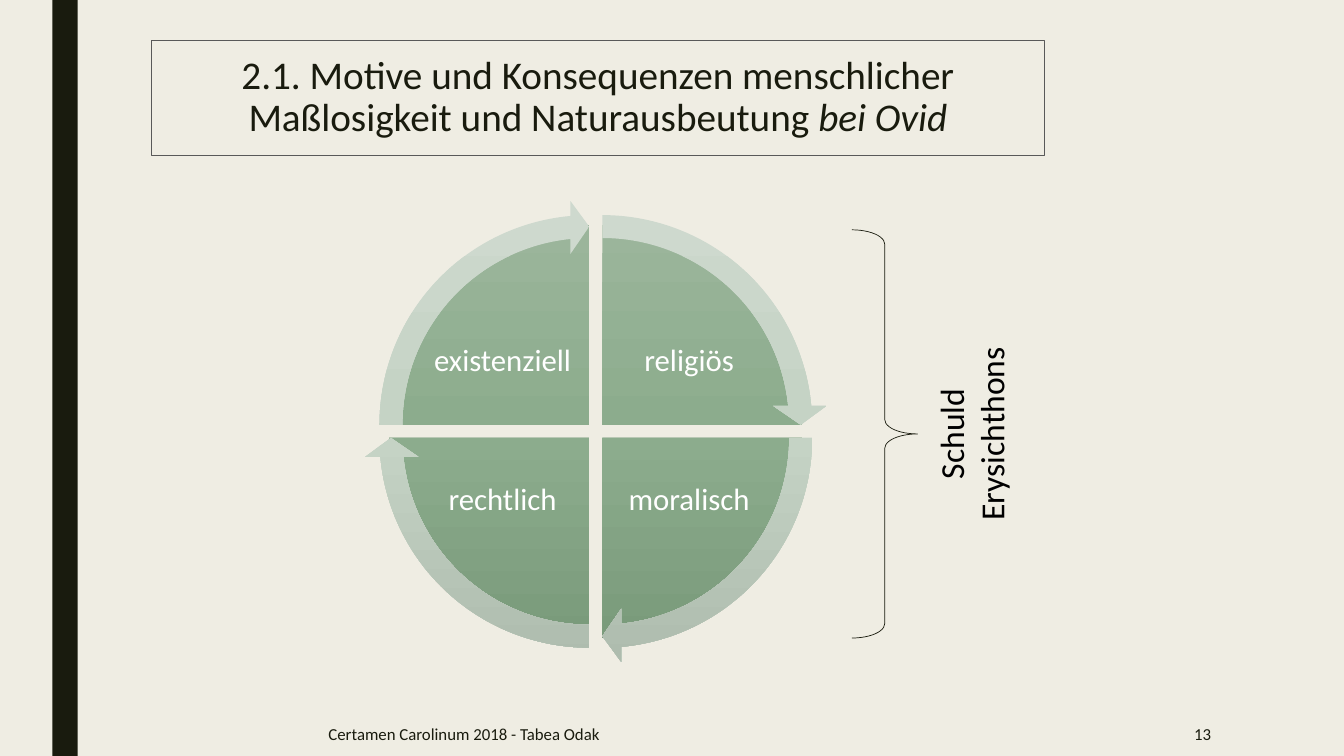
from dataclasses import dataclass

from lxml import etree
from pptx import Presentation
from pptx.dml.color import RGBColor
from pptx.enum.shapes import MSO_SHAPE as Shape
from pptx.enum.text import MSO_ANCHOR as Anchor, PP_ALIGN as Align
from pptx.oxml.ns import qn
from pptx.util import Inches, Pt

TITLE = [("2.1. Motive und Konsequenzen menschlicher "
          "Maßlosigkeit und Naturausbeutung ", False), ("bei Ovid", True)]
# Label, column side, row side, start of the quarter in quarter turns
QUARTERS = [
    ("religiös", 1, -1, 3),
    ("moralisch", 1, 1, 0),
    ("rechtlich", -1, 1, 1),
    ("existenziell", -1, -1, 2),
]
GUILT = ["Schuld", "Erysichthons"]
FOOTER, NUMBER = "Certamen Carolinum 2018 - Tabea Odak", "13"


@dataclass(frozen=True)
class Theme:
    font: str = "Calibri"
    paper: str = "EFEDE3"
    ink: str = "191B0E"
    black: str = "000000"
    white: str = "FFFFFF"
    frame: str = "595959"
    pie: tuple = ("9BB59B", "8CAC8D", "7A9B7B")
    arrow: tuple = ("CED9CE", "C5D3C5", "AEBCAE")
    title: int = 28
    guilt: int = 24
    label: int = 22
    footer: int = 12


THEME = Theme()
WIDTH, HEIGHT = 13.33, 7.5
CENTRE_X, CENTRE_Y, HALF_GAP = 5.91, 4.28, 0.065
PIE_SIZE, ARROW_SIZE = 3.97, 4.46
LABEL_W, LABEL_H, LABEL_DX, LABEL_DY = 1.47, 1.09, 0.925, 0.69
QUARTER_TURN, ARROW_SWEEP = 54, 50.725  # adjustment units, 216 to a full turn
FOOTER_TOP, FOOTER_H = 7.06, 0.44

deck = Presentation()
deck.slide_width, deck.slide_height = Inches(WIDTH), Inches(HEIGHT)
page = deck.slides.add_slide(deck.slide_layouts[6])
page.background.fill.solid()
page.background.fill.fore_color.rgb = RGBColor.from_string(THEME.paper)


def around(x, y, width, height):
    """Left, top, width and height of a box centred on x, y."""
    return x - width / 2, y - height / 2, width, height


def add_shape(kind, place, fill=None, line=None, adjust=()):
    """Add a preset shape; line is a (colour, points) pair."""
    shape = page.shapes.add_shape(kind, *map(Inches, place))
    shape.shadow.inherit = False
    for index, value in enumerate(adjust):
        shape.adjustments[index] = value
    if fill:
        shape.fill.solid()
        shape.fill.fore_color.rgb = RGBColor.from_string(fill)
    else:
        shape.fill.background()
    if line:
        shape.line.color.rgb = RGBColor.from_string(line[0])
        shape.line.width = Pt(line[1])
    else:
        shape.line.fill.background()
    return shape


def shade(shape, colours):
    """Fill a shape with an even gradient from top to bottom."""
    shape.fill.gradient()
    gradient = shape._element.spPr.find(qn("a:gradFill"))
    for child in list(gradient):
        gradient.remove(child)
    stops = etree.SubElement(gradient, qn("a:gsLst"))
    for index, colour in enumerate(colours):
        position = 100000 * index // (len(colours) - 1)
        stop = etree.SubElement(stops, qn("a:gs"), pos=str(position))
        etree.SubElement(stop, qn("a:srgbClr"), val=colour)
    etree.SubElement(gradient, qn("a:lin"), ang="5400000", scaled="0")


def write(box, paragraphs, size, colour, align=Align.CENTER, spacing=None,
          anchor=Anchor.MIDDLE):
    """Fill a box with paragraphs, each a list of (text, italic) pairs."""
    frame = box.text_frame
    frame.word_wrap = True
    frame.vertical_anchor = anchor
    for index, spans in enumerate(paragraphs):
        para = frame.add_paragraph() if index else frame.paragraphs[0]
        para.alignment = align
        para.line_spacing = spacing
        for text, italic in spans:
            span = para.add_run()
            span.text = text
            span.font.name, span.font.size = THEME.font, Pt(size)
            span.font.italic = italic
            span.font.color.rgb = RGBColor.from_string(colour)
    return frame


def add_text(place, lines, *style, **options):
    box = page.shapes.add_textbox(*map(Inches, place))
    write(box, [[(line, False)] for line in lines], *style, **options)
    return box


def add_quarter(kind, size, colours, column, row, adjust):
    x, y = CENTRE_X + column * HALF_GAP, CENTRE_Y + row * HALF_GAP
    shade(add_shape(kind, around(x, y, size, size), adjust=adjust), colours)


add_shape(Shape.RECTANGLE, (0.52, 0, 0.25, HEIGHT), THEME.ink)
for text, left, width, align in [(FOOTER, 3.16, 6.87, Align.LEFT),
                                 (NUMBER, 10.36, 1.75, Align.RIGHT)]:
    add_text((left, FOOTER_TOP, width, FOOTER_H), [text],
             THEME.footer, THEME.ink, align=align)

for label, column, row, turns in QUARTERS:
    start = turns * QUARTER_TURN
    end = (turns + 1) % 4 * QUARTER_TURN
    add_quarter(Shape.PIE, PIE_SIZE, THEME.pie, column, row, (start, end))
    place = around(CENTRE_X + column * LABEL_DX, CENTRE_Y + row * LABEL_DY,
                   LABEL_W, LABEL_H)
    frame = add_text(place, [label], THEME.label, THEME.white,
                     spacing=0.9).text_frame
    frame.margin_left = frame.margin_right = Inches(0.03)
    frame.margin_top = frame.margin_bottom = Inches(0.03)
    frame.paragraphs[0].space_after = Pt(8)

for _, column, row, turns in QUARTERS:
    start = turns * QUARTER_TURN
    add_quarter(Shape.CIRCULAR_ARROW, ARROW_SIZE, THEME.arrow, column, row,
                (0.051, 3.275, start + ARROW_SWEEP, start, 0.059))

guilt = add_text((8.64, 3.85, 1.99, 0.91), GUILT, THEME.guilt, THEME.black,
                 anchor=Anchor.TOP)
guilt.rotation = 270
add_shape(Shape.RIGHT_BRACE, (8.45, 2.28, 0.65, 4.05),
          line=(THEME.ink, 0.5), adjust=(0.22, 0.5))

title = add_shape(Shape.RECTANGLE, (1.5, 0.4, 8.86, 1.14),
                  line=(THEME.frame, 0.75))
write(title, [TITLE], THEME.title, THEME.ink, spacing=0.89)

deck.save("out.pptx")
